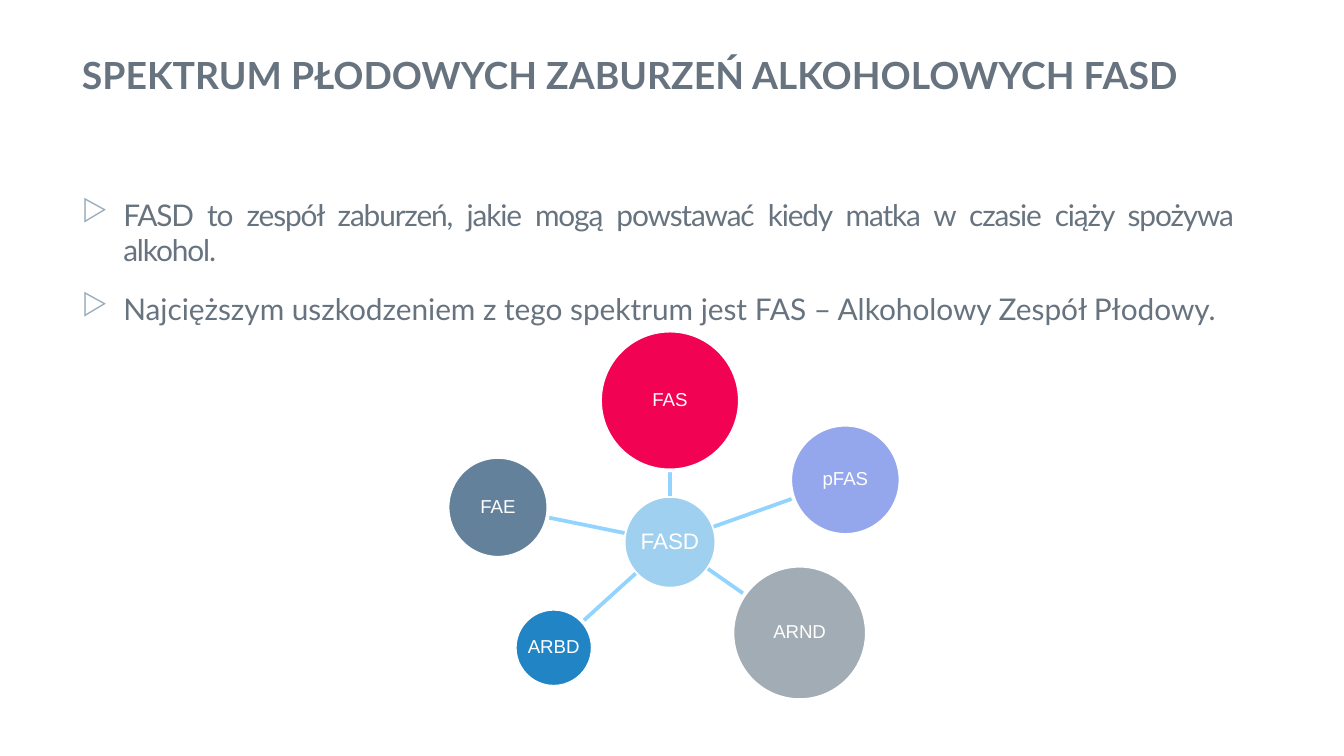
import math
from typing import NamedTuple

from lxml import etree
from pptx import Presentation
from pptx import util as u
from pptx.dml.color import RGBColor
from pptx.enum import shapes, text
from pptx.oxml import ns

SLIDE_W = u.Inches(10)
SLIDE_H = SLIDE_W * 9 // 16
INK, BULLET, WHITE, SPOKE = "677480", "97ABBC", "FFFFFF", "92D4FD"
# Text blocks: left and width in % of slide width, height in % of slide height
BLOCK_LEFT, BLOCK_WIDTH, BLOCK_HEIGHT = 5.1, 87.7, 16
TITLE_TOP, POINTS_TOP = 5.16, 24.18


class Bubble(NamedTuple):
    label: str
    x: float  # centre, % of slide width
    y: float  # centre, % of slide height
    diameter: float  # % of slide width
    fill: str
    size: int = 10


class Point(NamedTuple):
    wording: str
    spacing: int  # hundredths of a point between letters


HUB = Bubble("FASD", 49.85, 71.73, 6.9, "9FD0EF", 12)
SATELLITES = [
    Bubble("FAS", 49.85, 52.98, 10.4, "F20253"),
    Bubble("pFAS", 62.9, 63.47, 8.2, "94A7ED"),
    Bubble("ARND", 59.5, 83.73, 10, "A2ACB4"),
    Bubble("ARBD", 41.2, 85.69, 5.8, "2185C5"),
    Bubble("FAE", 37.05, 67.11, 7.5, "64819B"),
]
POINTS = [
    Point("FASD to zespół zaburzeń, jakie mogą powstawać kiedy matka "
          "w czasie ciąży spożywa alkohol.", -60),
    Point("Najcięższym uszkodzeniem z tego spektrum jest FAS – "
          "Alkoholowy Zespół Płodowy.", 0),
]


def across(share: float) -> int:
    return round(SLIDE_W * share / 100)


def down(share: float) -> int:
    return round(SLIDE_H * share / 100)


def rgb(value: str) -> RGBColor:
    return RGBColor.from_string(value)


def add_run(paragraph, wording: str, font: str, size: int, colour: str, bold: bool = False):
    run = paragraph.add_run()
    run.text = wording
    run.font.name, run.font.size, run.font.bold = font, u.Pt(size), bold
    run.font.color.rgb = rgb(colour)
    return run


def set_frame(frame, inset: float, anchor) -> None:
    frame.word_wrap = True
    frame.auto_size = text.MSO_AUTO_SIZE.NONE
    frame.vertical_anchor = anchor
    frame.margin_left = frame.margin_right = u.Inches(inset)
    frame.margin_top = frame.margin_bottom = u.Inches(inset)


def set_bullet(paragraph, char: str, colour: str, indent: float) -> None:
    props = paragraph._p.get_or_add_pPr()
    props.set("marL", str(u.Inches(indent)))
    props.set("indent", str(-u.Inches(indent)))
    tint = etree.SubElement(props, ns.qn("a:buClr"))
    etree.SubElement(tint, ns.qn("a:srgbClr"), val=colour)
    etree.SubElement(props, ns.qn("a:buChar"), char=char)


def add_spoke(slide, hub: Bubble, satellite: Bubble) -> None:
    """Join the rims of two bubbles along the line between their centres."""
    x, y = across(hub.x), down(hub.y)
    dx, dy = across(satellite.x) - x, down(satellite.y) - y
    length = math.hypot(dx, dy)
    start = across(hub.diameter / 2) / length
    end = 1 - across(satellite.diameter / 2) / length
    spoke = slide.shapes.add_connector(
        shapes.MSO_CONNECTOR.STRAIGHT,
        round(x + dx * start), round(y + dy * start),
        round(x + dx * end), round(y + dy * end))
    spoke.line.color.rgb = rgb(SPOKE)
    spoke.line.width = u.Pt(2)
    etree.SubElement(spoke._element.spPr, ns.qn("a:effectLst"))


def add_bubble(slide, bubble: Bubble) -> None:
    side = across(bubble.diameter)
    circle = slide.shapes.add_shape(
        shapes.MSO_SHAPE.OVAL, across(bubble.x) - side // 2,
        down(bubble.y) - side // 2, side, side)
    circle.shadow.inherit = False
    circle.fill.solid()
    circle.fill.fore_color.rgb = rgb(bubble.fill)
    circle.line.color.rgb = rgb(WHITE)
    circle.line.width = u.Pt(2)
    set_frame(circle.text_frame, 0.01, text.MSO_ANCHOR.MIDDLE)
    label = circle.text_frame.paragraphs[0]
    label.alignment = text.PP_ALIGN.CENTER
    label.line_spacing = 0.9
    add_run(label, bubble.label, "Arial", bubble.size, WHITE)


def add_title(slide, wording: str) -> None:
    title = slide.shapes.title
    title.left, title.top = across(BLOCK_LEFT), down(TITLE_TOP)
    title.width, title.height = across(BLOCK_WIDTH), down(BLOCK_HEIGHT)
    set_frame(title.text_frame, 0.1, text.MSO_ANCHOR.TOP)
    heading = title.text_frame.paragraphs[0]
    heading.alignment = text.PP_ALIGN.LEFT
    heading.space_before = u.Pt(6)
    add_run(heading, wording, "Lato", 20, INK, bold=True)


def add_points(slide, points: list[Point]) -> None:
    box = slide.shapes.add_textbox(across(BLOCK_LEFT), down(POINTS_TOP),
                                   across(BLOCK_WIDTH), down(BLOCK_HEIGHT))
    frame = box.text_frame
    set_frame(frame, 0.1, text.MSO_ANCHOR.TOP)
    for i, point in enumerate(points):
        paragraph = frame.add_paragraph() if i else frame.paragraphs[0]
        paragraph.alignment = text.PP_ALIGN.JUSTIFY
        paragraph.space_after = u.Pt(12)
        set_bullet(paragraph, "▷", BULLET, 0.31)
        run = add_run(paragraph, point.wording, "Lato", 16, INK)
        run.font._element.set("spc", str(point.spacing))


def main() -> None:
    deck = Presentation()
    deck.slide_width, deck.slide_height = SLIDE_W, SLIDE_H
    slide = deck.slides.add_slide(deck.slide_layouts.get_by_name("Title Only"))

    # Heading and bullet points
    add_title(slide, "SPEKTRUM PŁODOWYCH ZABURZEŃ ALKOHOLOWYCH FASD")
    add_points(slide, POINTS)

    # Hub with its satellites
    add_bubble(slide, HUB)
    for satellite in SATELLITES:
        add_spoke(slide, HUB, satellite)
        add_bubble(slide, satellite)

    deck.save("out.pptx")


if __name__ == "__main__":
    main()
